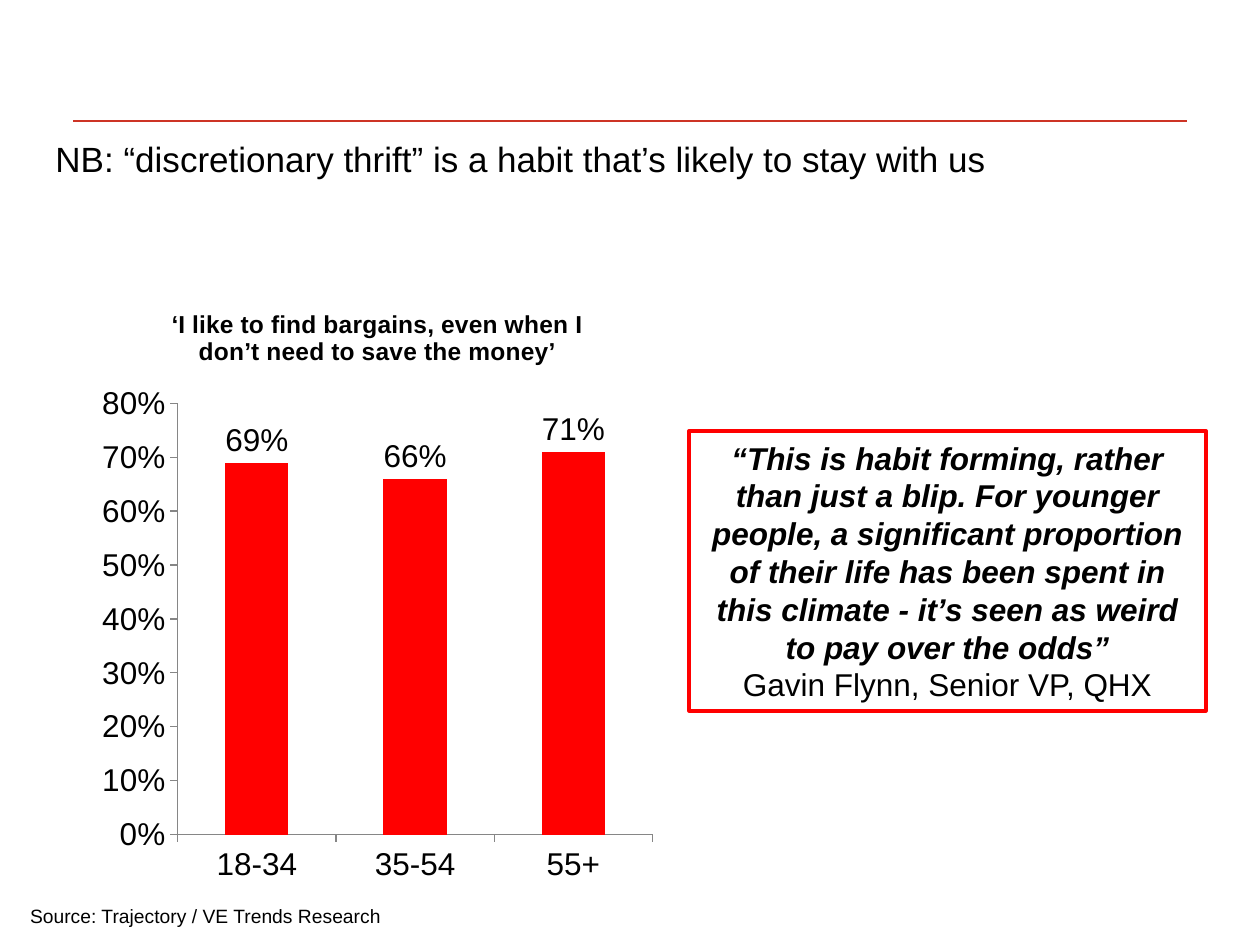
from lxml import etree
from pptx import Presentation
from pptx.chart.data import CategoryChartData
from pptx.dml.color import RGBColor
from pptx.enum.chart import XL_CHART_TYPE, XL_LABEL_POSITION, XL_TICK_MARK
from pptx.enum.shapes import MSO_CONNECTOR, MSO_SHAPE
from pptx.enum.text import MSO_ANCHOR, PP_ALIGN
from pptx.oxml.ns import qn
from pptx.util import Inches, Pt

COLUMNS = XL_CHART_TYPE.COLUMN_CLUSTERED
OUTSIDE_END = XL_LABEL_POSITION.OUTSIDE_END
TICK_OUT, TICK_NONE = XL_TICK_MARK.OUTSIDE, XL_TICK_MARK.NONE
STRAIGHT = MSO_CONNECTOR.STRAIGHT
RECTANGLE = MSO_SHAPE.RECTANGLE
TOP, MIDDLE = MSO_ANCHOR.TOP, MSO_ANCHOR.MIDDLE
LEFT, CENTER = PP_ALIGN.LEFT, PP_ALIGN.CENTER

FONT = "Arial"
BLACK, RED, RULE_RED, AXIS_GREY = "000000", "FF0000", "CD3425", "868686"
TITLE_ONLY = 5

HEADLINE = "NB: “discretionary thrift” is a habit that’s likely to stay with us"
CHART_TITLE = "‘I like to find bargains, even when I don’t need to save the money’"
AGREEMENT_BY_AGE = {"18-34": 0.69, "35-54": 0.66, "55+": 0.71}
QUOTE = (
    "“This is habit forming, rather than just a blip. For younger people, "
    "a significant proportion of their life has been spent in this climate "
    "- it’s seen as weird to pay over the odds”"
)
SPEAKER = "Gavin Flynn, Senior VP, QHX"
SOURCE = "Source: Trajectory / VE Trends Research"


def rgb(value):
    return RGBColor.from_string(value)


def set_font(font, size, **formats):
    for name, value in {"name": FONT, "size": Pt(size), **formats}.items():
        setattr(font, name, value)
    font.color.rgb = rgb(BLACK)


def set_line(line, color, width):
    line.color.rgb = rgb(color)
    line.width = Pt(width)


def write_text(frame, paragraphs, size, align=LEFT, anchor=TOP):
    """Fill a frame with (text, font formats) pairs, one per paragraph."""
    frame.word_wrap = True
    frame.vertical_anchor = anchor
    for index, (text, formats) in enumerate(paragraphs):
        paragraph = frame.add_paragraph() if index else frame.paragraphs[0]
        paragraph.text = text
        paragraph.alignment = align
        set_font(paragraph.font, size, **formats)


def add_rule(slide):
    rule = slide.shapes.add_connector(
        STRAIGHT, Inches(0.58), Inches(0.96), Inches(9.42), Inches(0.96))
    set_line(rule.line, RULE_RED, 0.75)
    etree.SubElement(rule._element.spPr, qn("a:effectLst"))


def place_headline(slide):
    headline = slide.shapes.title
    position = {"left": 0.34, "top": 1.04, "width": 9.41, "height": 1.25}
    for name, value in position.items():
        setattr(headline, name, Inches(value))
    write_text(headline.text_frame, [(HEADLINE, {})], 20)


def format_axis(axis, formats):
    for name, value in formats.items():
        setattr(axis, name, value)
    axis.minor_tick_mark = TICK_NONE
    axis.major_tick_mark = TICK_OUT
    axis.has_major_gridlines = False
    set_line(axis.format.line, AXIS_GREY, 0.75)


def add_bargain_chart(slide):
    data = CategoryChartData(number_format="0%")
    data.categories = list(AGREEMENT_BY_AGE)
    data.add_series("Series 1", list(AGREEMENT_BY_AGE.values()))
    chart = slide.shapes.add_chart(
        COLUMNS, Inches(0.72), Inches(2.26), Inches(4.55), Inches(4.84), data).chart
    set_font(chart.font, 18)
    chart.has_legend = False
    title_frame = chart.chart_title.text_frame
    title_frame.text = CHART_TITLE
    set_font(title_frame.paragraphs[0].runs[0].font, 14, bold=True)

    format_axis(chart.category_axis, {})
    format_axis(chart.value_axis, {
        "minimum_scale": 0, "maximum_scale": 0.8, "major_unit": 0.1})
    chart.value_axis.tick_labels.number_format = "0%"
    chart.value_axis.tick_labels.number_format_is_linked = False

    plot = chart.plots[0]
    plot.gap_width = 150
    plot.vary_by_categories = False
    bars = plot.series[0]
    bars.format.fill.solid()
    bars.format.fill.fore_color.rgb = rgb(RED)
    label_formats = {
        "show_value": True, "number_format": "0%",
        "number_format_is_linked": False, "position": OUTSIDE_END}
    for name, value in label_formats.items():
        setattr(bars.data_labels, name, value)


def add_quote_box(slide):
    box = slide.shapes.add_shape(
        RECTANGLE, Inches(5.47), Inches(3.42), Inches(4.1), Inches(2.22))
    box.shadow.inherit = False
    box.fill.background()
    set_line(box.line, RED, 2.25)
    quote_lines = [(QUOTE, {"bold": True, "italic": True}), (SPEAKER, {})]
    write_text(box.text_frame, quote_lines, 18, CENTER, MIDDLE)


def add_source(slide):
    source = slide.shapes.add_textbox(
        Inches(0.14), Inches(7.13), Inches(4.02), Inches(0.29))
    write_text(source.text_frame, [(SOURCE, {})], 11)


def main():
    deck = Presentation()
    deck.slide_width, deck.slide_height = Inches(10), Inches(7.5)
    slide = deck.slides.add_slide(deck.slide_layouts[TITLE_ONLY])
    add_rule(slide)
    place_headline(slide)
    add_bargain_chart(slide)
    add_quote_box(slide)
    add_source(slide)
    deck.save("out.pptx")


if __name__ == "__main__":
    main()
